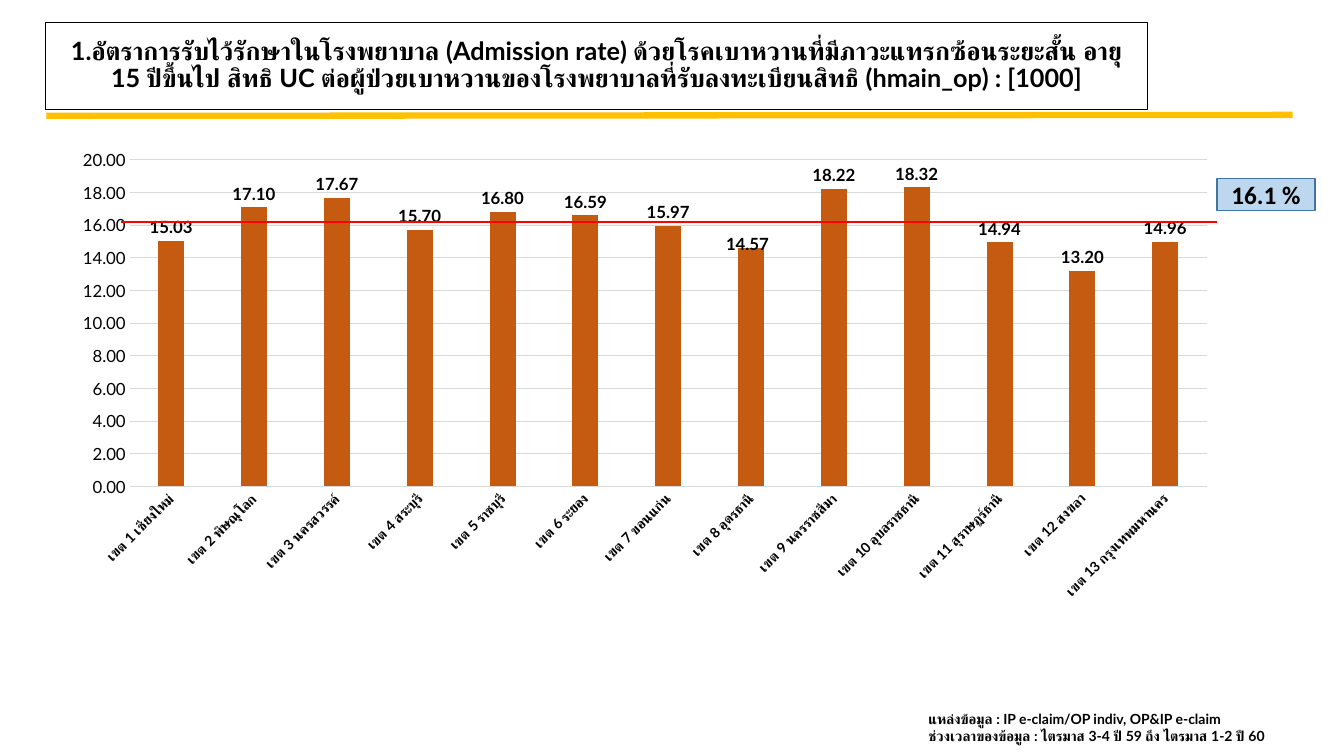
from lxml import etree
from pptx import Presentation
from pptx import util as u
from pptx.chart import data as chart_data
from pptx.dml import color
from pptx.enum import chart as ch
from pptx.enum import shapes, text
from pptx.oxml import ns, parse_xml

COLOURS = {"ink": "000000", "paper": "FFFFFF", "gold": "FFC000", "grid": "D9D9D9",
           "bar": "C55A11", "badge": "BDD7EE", "badge_edge": "43739E", "average": "FF0000"}
WIDTH, HEIGHT = u.Inches(13.33), u.Inches(7.5)

TITLE_BOX = (3.38, 2.93, 82, 11.6)
RULE = (3.45, 15.33, 96.17, 15.2)
CHART_BOX = (4.43, 18.67, 87.1, 61.73)
BADGE_BOX = (90.55, 23.6, 7.28, 4.27)
SOURCE_BOX = (68.34, 93.33, 30.76, 5.87)
AVERAGE_LINE = (9, 29.33, 90.55, 29.33)

RATES = {
    "เขต 1 เชียงใหม่": 15.03, "เขต 2 พิษณุโลก": 17.1, "เขต 3 นครสวรรค์": 17.67,
    "เขต 4 สระบุรี": 15.7, "เขต 5 ราชบุรี": 16.8, "เขต 6 ระยอง": 16.59,
    "เขต 7 ขอนแก่น": 15.97, "เขต 8 อุดรธานี": 14.57, "เขต 9 นครราชสีมา": 18.22,
    "เขต 10 อุบลราชธานี": 18.32, "เขต 11 สุราษฎร์ธานี": 14.94, "เขต 12 สงขลา": 13.2,
    "เขต 13 กรุงเทพมหานคร": 14.96,
}
NUDGED_LABEL = 7


def rgb(name):
    return color.RGBColor.from_string(COLOURS[name])


def percent(box):
    return [int(share * side / 100) for share, side in zip(box, (WIDTH, HEIGHT) * 2)]


def style_font(font, size, name="Lato", bold=True):
    font.name, font.size, font.bold = name, u.Pt(size), bold
    font.color.rgb = rgb("ink")


def style_line(line, name, points):
    line.color.rgb = rgb(name)
    line.width = u.Pt(points)


def style_box(shape, fill, edge, points):
    shape.fill.solid()
    shape.fill.fore_color.rgb = rgb(fill)
    style_line(shape.line, edge, points)


def write(para, words, size, name="Lato", align=None):
    para.alignment = align
    span = para.add_run()
    span.text = words
    style_font(span.font, size, name)


def add_line(page, ends, name, points):
    line = page.shapes.add_connector(shapes.MSO_CONNECTOR.STRAIGHT, *percent(ends))
    style_line(line.line, name, points)
    etree.SubElement(line._element.spPr, ns.qn("a:effectLst"))


def manual_layout(**settings):
    parts = "".join(f'<c:{key} val="{value}"/>' for key, value in settings.items())
    return parse_xml(f'<c:layout {ns.nsdecls("c")}><c:manualLayout>{parts}</c:manualLayout></c:layout>')


def fill_title(page, box):
    title = page.shapes.title
    title.left, title.top, title.width, title.height = percent(box)
    style_box(title, "paper", "ink", 0.75)
    frame = title.text_frame
    frame.auto_size = text.MSO_AUTO_SIZE.NONE
    frame.vertical_anchor = text.MSO_ANCHOR.MIDDLE
    para = frame.paragraphs[0]
    para.line_spacing = 0.9
    write(para, "1.อัตราการรับไว้รักษาในโรงพยาบาล (Admission rate) ด้วยโรคเบาหวานที่มีภาวะแทรกซ้อนระยะสั้น "
          "อายุ 15 ปีขึ้นไป สิทธิ UC ต่อผู้ป่วยเบาหวานของโรงพยาบาลที่รับลงทะเบียนสิทธิ (hmain_op) : [1000]",
          18, align=text.PP_ALIGN.CENTER)


def style_axes(chart):
    regions, rates = chart.category_axis, chart.value_axis
    for axis in (regions, rates):
        axis.major_tick_mark = axis.minor_tick_mark = ch.XL_TICK_MARK.NONE
    style_font(regions.tick_labels.font, 10)
    regions._element.find(ns.qn("c:txPr")).find(ns.qn("a:bodyPr")).set("rot", "-2700000")
    style_line(regions.format.line, "grid", 0.75)
    style_font(rates.tick_labels.font, 12, bold=False)
    rates.tick_labels.number_format = "0.00"
    rates.tick_labels.number_format_is_linked = False
    rates.minimum_scale, rates.maximum_scale, rates.major_unit = 0, 20, 2
    rates.format.line.fill.background()
    style_line(rates.major_gridlines.format.line, "grid", 0.75)


def style_bars(plot):
    plot.gap_width, plot.overlap, plot.vary_by_categories = 219, -27, False
    bars = plot.series[0]
    bars.format.fill.solid()
    bars.format.fill.fore_color.rgb = rgb("bar")
    labels = bars.data_labels
    labels.show_value = True
    labels.number_format, labels.number_format_is_linked = "0.00", False
    labels.position = ch.XL_LABEL_POSITION.OUTSIDE_END
    style_font(labels.font, 12)
    nudged = bars.points[NUDGED_LABEL].data_label
    nudged.position = ch.XL_LABEL_POSITION.OUTSIDE_END
    style_font(nudged.font, 12)
    index = labels._element.find(ns.qn("c:dLbl")).find(ns.qn("c:idx"))
    index.addnext(manual_layout(x=-0.003, y=0.02))


def add_rate_chart(page, box):
    data = chart_data.CategoryChartData(number_format="0.00")
    data.categories = list(RATES)
    data.add_series("Series 1", list(RATES.values()))
    chart = page.shapes.add_chart(ch.XL_CHART_TYPE.COLUMN_CLUSTERED, *percent(box), data).chart
    chart.has_legend = chart.has_title = False
    style_font(chart.font, 10, "Calibri", False)
    style_axes(chart)
    style_bars(chart.plots[0])
    area = chart._chartSpace.chart.plotArea
    for old in area.findall(ns.qn("c:layout")):
        area.remove(old)
    area.insert(0, manual_layout(layoutTarget="inner", xMode="edge", yMode="edge",
                                 x=0.06, y=0.04, w=0.92, h=0.7))


def add_average(page, box, ends):
    badge = page.shapes.add_shape(shapes.MSO_SHAPE.RECTANGLE, *percent(box))
    badge.shadow.inherit = False
    style_box(badge, "badge", "badge_edge", 1)
    badge.text_frame.vertical_anchor = text.MSO_ANCHOR.MIDDLE
    write(badge.text_frame.paragraphs[0], "16.1 %", 18, "Calibri", text.PP_ALIGN.CENTER)
    add_line(page, ends, "average", 1.5)


def add_source(page, box):
    frame = page.shapes.add_textbox(*percent(box)).text_frame
    frame.word_wrap = True
    write(frame.paragraphs[0], "แหล่งข้อมูล : IP e-claim/OP indiv, OP&IP e-claim", 10)
    write(frame.add_paragraph(), "ช่วงเวลาของข้อมูล : ไตรมาส 3-4 ปี 59 ถึง ไตรมาส 1-2 ปี 60", 10)


def main():
    deck = Presentation()
    deck.slide_width, deck.slide_height = WIDTH, HEIGHT
    page = deck.slides.add_slide(deck.slide_layouts[5])
    add_line(page, RULE, "gold", 4.5)
    fill_title(page, TITLE_BOX)
    add_rate_chart(page, CHART_BOX)
    add_source(page, SOURCE_BOX)
    add_average(page, BADGE_BOX, AVERAGE_LINE)
    deck.save("out.pptx")


if __name__ == "__main__":
    main()
